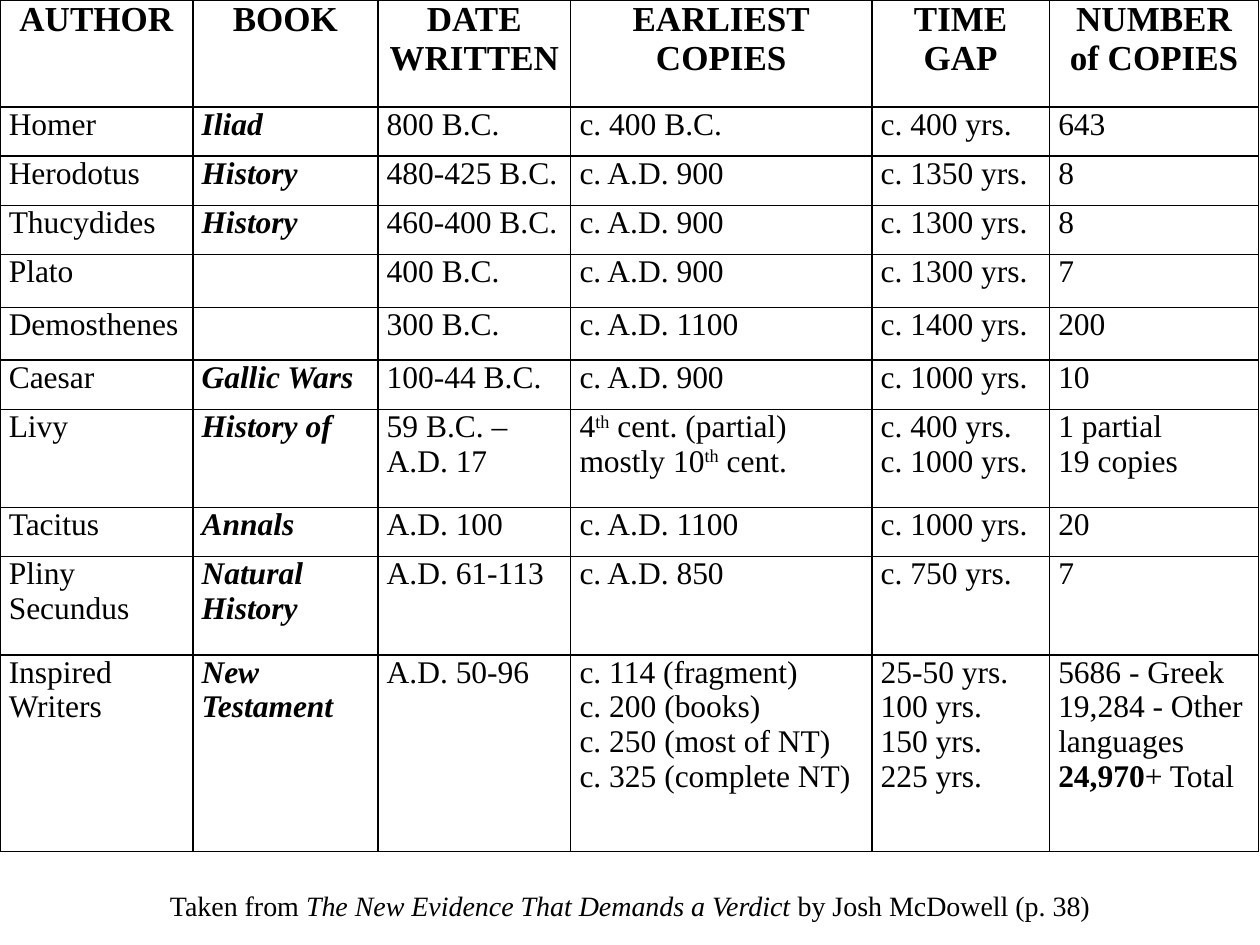
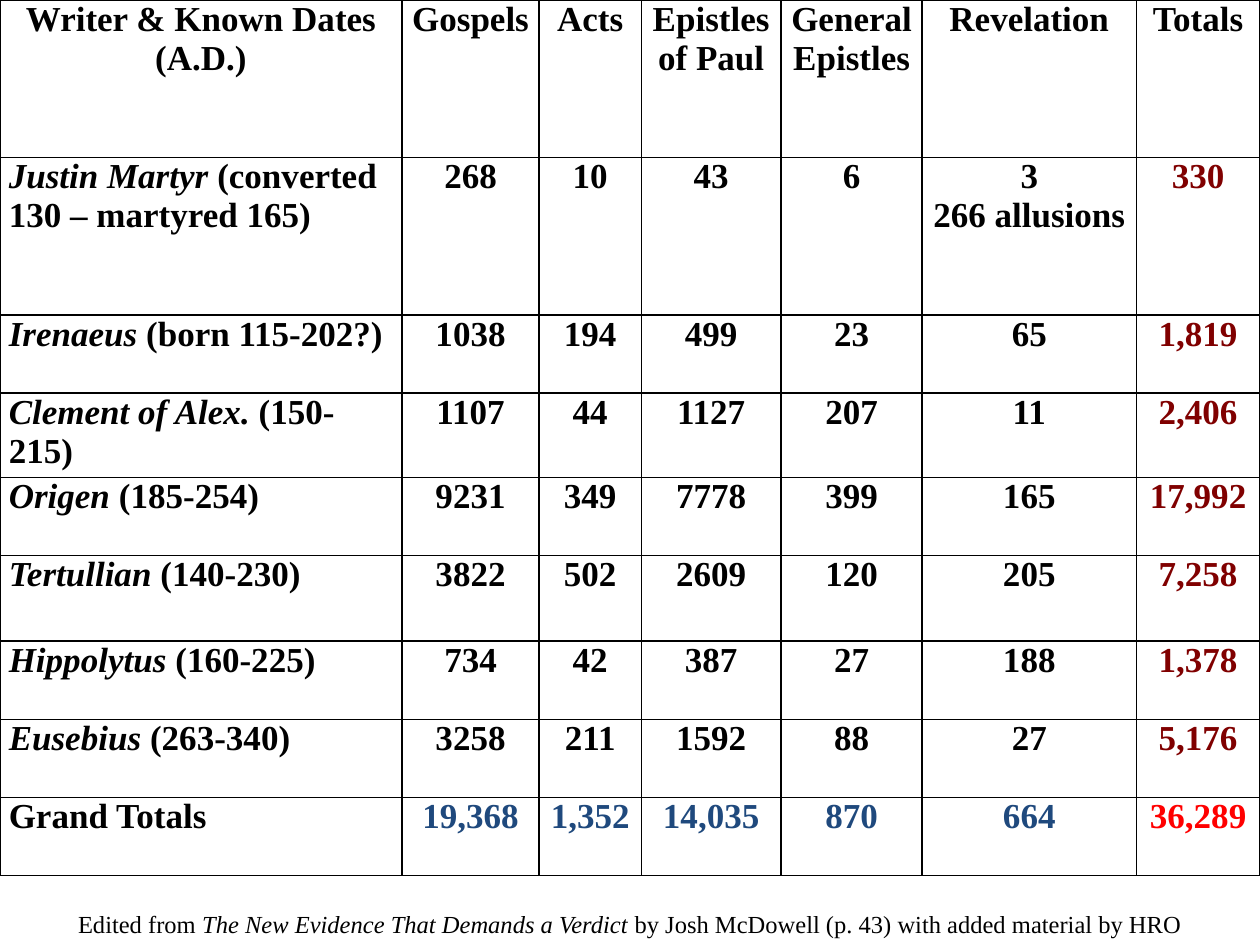
from dataclasses import dataclass

from lxml import etree
from pptx import Presentation
from pptx.dml.color import RGBColor
from pptx.enum.text import MSO_ANCHOR, MSO_AUTO_SIZE, PP_ALIGN
from pptx.oxml.ns import qn
from pptx.util import Emu, Pt

LEFT = PP_ALIGN.LEFT
CENTER = PP_ALIGN.CENTER
MIDDLE = MSO_ANCHOR.MIDDLE
GROW = MSO_AUTO_SIZE.SHAPE_TO_FIT_TEXT

SCALE = 9144
WIDE, HIGH = 1000, 750
BLANK = 6
SIDES = ("a:lnL", "a:lnR", "a:lnT", "a:lnB")
MARKS = "*_^"


@dataclass(frozen=True)
class Theme:
    font: str = "Times New Roman"
    ink: str = "000000"
    total: str = "800000"
    sum: str = "1F497D"
    grand: str = "FF0000"
    head: int = 20
    body: int = 18
    note: int = 16
    small: int = 14
    inset: int = 7
    rule: int = 1


@dataclass(frozen=True)
class Look:
    size: int
    color: str
    bold: bool = False
    italic: bool = False
    align: PP_ALIGN = LEFT


THEME = Theme()

COPIES_COLS = [153, 147, 153, 239, 141, 166]
COPIES_ROWS = [85, 39, 39, 39, 42, 42, 39, 78, 39, 78, 156]
COPIES = [
    ["AUTHOR", "BOOK", "DATE\nWRITTEN", "EARLIEST\nCOPIES", "TIME GAP", "NUMBER of COPIES"],
    ["Homer", "Iliad", "800 B.C.", "c. 400 B.C.", "c. 400 yrs.", "643"],
    ["Herodotus", "History", "480-425 B.C.", "c. A.D. 900", "c. 1350 yrs.", "8"],
    ["Thucydides", "History", "460-400 B.C.", "c. A.D. 900", "c. 1300 yrs.", "8"],
    ["Plato", "", "400 B.C.", "c. A.D. 900", "c. 1300 yrs.", "7"],
    ["Demosthenes", "", "300 B.C.", "c. A.D. 1100", "c. 1400 yrs.", "200"],
    ["Caesar", "Gallic Wars", "100-44 B.C.", "c. A.D. 900", "c. 1000 yrs.", "10"],
    ["Livy", "History of", "59 B.C. – A.D. 17",
     "4^th^ cent. (partial)\nmostly 10^th^ cent.",
     "c. 400 yrs.\nc. 1000 yrs.", "1 partial\n19 copies"],
    ["Tacitus", "Annals", "A.D. 100", "c. A.D. 1100", "c. 1000 yrs.", "20"],
    ["Pliny Secundus", "Natural History", "A.D. 61-113", "c. A.D. 850", "c. 750 yrs.", "7"],
    ["Inspired Writers", "New Testament", "A.D. 50-96",
     "c. 114 (fragment)\nc. 200 (books)\nc. 250 (most of NT)\nc. 325 (complete NT)",
     "25-50 yrs.\n100 yrs.\n150 yrs.\n225 yrs.",
     "5686 - Greek\n19,284 - Other languages\n_24,970_+ Total"],
]

QUOTES_COLS = [319, 109, 81, 111, 112, 170, 98]
QUOTES_ROWS = [125, 125, 62, 67, 62, 68, 62, 62, 62]
QUOTES = [
    ["Writer & Known Dates (A.D.)", "Gospels", "Acts", "Epistles of Paul",
     "General Epistles", "Revelation", "Totals"],
    ["*Justin Martyr* (converted 130 – martyred 165)",
     "268", "10", "43", "6", "3\n266 allusions", "330"],
    ["*Irenaeus* (born 115-202?)", "1038", "194", "499", "23", "65", "1,819"],
    ["*Clement of Alex.* (150-215)", "1107", "44", "1127", "207", "11", "2,406"],
    ["*Origen *(185-254)", "9231", "349", "7778", "399", "165", "17,992"],
    ["*Tertullian* (140-230)", "3822", "502", "2609", "120", "205", "7,258"],
    ["*Hippolytus* (160-225)", "734", "42", "387", "27", "188", "1,378"],
    ["*Eusebius* (263-340)", "3258", "211", "1592", "88", "27", "5,176"],
    ["Grand Totals", "19,368", "1,352", "14,035", "870", "664", "36,289"],
]


def px(n):
    return Emu(n * SCALE)


def copies_look(row, col):
    if row == 0:
        return Look(THEME.head, THEME.ink, bold=True, align=CENTER)
    book = col == 1
    return Look(THEME.body, THEME.ink, bold=book, italic=book)


def quotes_look(row, col):
    last_row = row == len(QUOTES) - 1
    last_col = col == len(QUOTES_COLS) - 1
    color = THEME.ink
    if last_row and last_col:
        color = THEME.grand
    elif last_row and col:
        color = THEME.sum
    elif last_col and row:
        color = THEME.total
    align = CENTER if row == 0 or col else LEFT
    return Look(THEME.head, color, bold=True, align=align)


class Deck:
    def __init__(self, theme):
        self.theme = theme
        self.show = Presentation()
        self.show.slide_width, self.show.slide_height = px(WIDE), px(HIGH)
        self.slide = None

    def page(self):
        self.slide = self.show.slides.add_slide(self.show.slide_layouts[BLANK])

    def text(self, frame, words, look):
        for i, line in enumerate(words.split("\n")):
            para = frame.add_paragraph() if i else frame.paragraphs[0]
            para.alignment = look.align
            font = para.font
            font.name, font.size = self.theme.font, Pt(look.size)
            font.bold, font.italic = look.bold, look.italic
            font.color.rgb = RGBColor.from_string(look.color)
            self.runs(para, line)

    def runs(self, para, line):
        mark = next((m for m in MARKS if m in line), None)
        for i, part in enumerate(line.split(mark) if mark else [line]):
            if not part:
                continue
            run = para.add_run()
            run.text = part
            if i % 2 and mark == "*":
                run.font.italic = True
            elif i % 2 and mark == "_":
                run.font.bold = True
            elif i % 2:
                run.font._element.set("baseline", "30000")

    def edge(self, cell):
        props = cell._tc.get_or_add_tcPr()
        for side in SIDES:
            line = etree.SubElement(props, qn(side), w=str(Pt(self.theme.rule)))
            fill = etree.SubElement(line, qn("a:solidFill"))
            etree.SubElement(fill, qn("a:srgbClr"), val=self.theme.ink)

    def grid(self, cols, rows, data, look):
        frame = self.slide.shapes.add_table(
            len(rows), len(cols), 0, 0, px(sum(cols)), px(sum(rows)))
        table = frame.table
        table.first_row = table.horz_banding = False
        for col, width in zip(table.columns, cols):
            col.width = px(width)
        for row, height in zip(table.rows, rows):
            row.height = px(height)
        for r, line in enumerate(data):
            for c, words in enumerate(line):
                cell = table.cell(r, c)
                cell.margin_left = cell.margin_right = px(self.theme.inset)
                cell.margin_top = cell.margin_bottom = 0
                self.edge(cell)
                cell.fill.background()
                self.text(cell.text_frame, words, look(r, c))

    def note(self, top, height, words, size):
        box = self.slide.shapes.add_textbox(0, px(top), px(WIDE), px(height))
        frame = box.text_frame
        frame.word_wrap = True
        frame.auto_size = GROW
        frame.vertical_anchor = MIDDLE
        self.text(frame, words, Look(size, self.theme.ink, align=CENTER))


def main():
    deck = Deck(THEME)
    source = "*The New Evidence That Demands a Verdict* by Josh McDowell"

    deck.page()
    deck.grid(COPIES_COLS, COPIES_ROWS, COPIES, copies_look)
    deck.note(700, 37, f"Taken from {source} (p. 38)", THEME.note)

    deck.page()
    deck.grid(QUOTES_COLS, QUOTES_ROWS, QUOTES, quotes_look)
    deck.note(717, 33, f"Edited from {source} (p. 43) with added material by HRO",
              THEME.small)

    deck.show.save("out.pptx")


if __name__ == "__main__":
    main()
